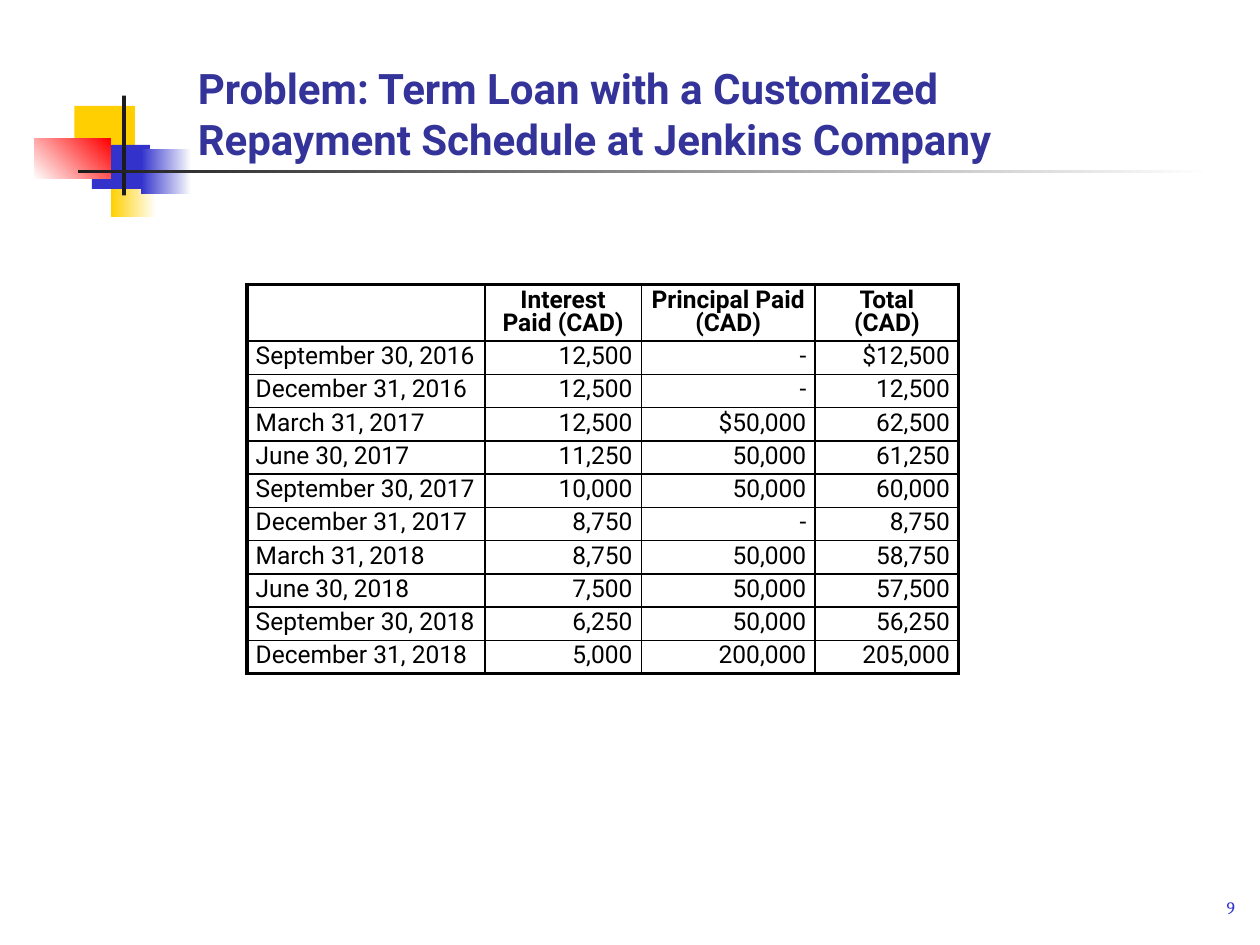
from dataclasses import dataclass
from typing import Any, NamedTuple

from lxml import etree
from pptx import Presentation
from pptx.dml.color import RGBColor
from pptx.enum.shapes import MSO_SHAPE
from pptx.enum.text import MSO_ANCHOR, MSO_AUTO_SIZE, PP_ALIGN
from pptx.oxml.ns import qn
from pptx.util import Inches, Pt

RECTANGLE = MSO_SHAPE.RECTANGLE
TOP, BOTTOM = MSO_ANCHOR.TOP, MSO_ANCHOR.BOTTOM
LEFT, CENTER, RIGHT = PP_ALIGN.LEFT, PP_ALIGN.CENTER, PP_ALIGN.RIGHT
NO_AUTOFIT = MSO_AUTO_SIZE.NONE
TITLE_ONLY_LAYOUT = 5


@dataclass(frozen=True)
class Theme:
    font: str = "Roboto"
    number_font: str = "Cambria"
    title_color: str = "333399"
    text_color: str = "000000"
    yellow: str = "FFCF01"
    blue: str = "3333CC"
    red: str = "FF0000"
    dark: str = "1C1C1C"
    white: str = "FFFFFF"
    title_size: float = 24
    table_size: float = 14
    number_size: float = 10
    outer_border: float = 2.25
    inner_border: float = 1


THEME = Theme()


class Box(NamedTuple):
    left: float
    top: float
    width: float
    height: float


class Block(NamedTuple):
    """A decorative rectangle; a second colour makes it a gradient."""
    box: Box
    color: str
    end_color: str | None = None
    angle: float = 0


class Payment(NamedTuple):
    date: str
    interest: str
    principal: str
    total: str


BLOCKS = [
    Block(Box(0.88, 1.2, 0.36, 0.52), THEME.yellow, THEME.white),
    Block(Box(0.59, 0.84, 0.48, 0.35), THEME.yellow),
    Block(Box(0.73, 1.15, 0.46, 0.35), THEME.blue),
    Block(Box(1.12, 1.18, 0.4, 0.36), THEME.blue, THEME.white),
    Block(Box(0.27, 1.1, 0.61, 0.32), THEME.white, THEME.red, 45),
    Block(Box(0.97, 0.76, 0.03, 0.79), THEME.dark),
    Block(Box(0.62, 1.35, 9, 0.02), THEME.dark, THEME.white),
]

TITLE = "Problem: Term Loan with a Customized Repayment Schedule at Jenkins Company"
HEADER = Payment("", "Interest Paid (CAD)", "Principal Paid (CAD)", "Total\n(CAD)")
PAYMENTS = [
    Payment("September 30, 2016", "12,500", "-", "$12,500"),
    Payment("December 31, 2016", "12,500", "-", "12,500"),
    Payment("March 31, 2017", "12,500", "$50,000", "62,500"),
    Payment("June 30, 2017", "11,250", "50,000", "61,250"),
    Payment("September 30, 2017", "10,000", "50,000", "60,000"),
    Payment("December 31, 2017", "8,750", "-", "8,750"),
    Payment("March 31, 2018", "8,750", "50,000", "58,750"),
    Payment("June 30, 2018", "7,500", "50,000", "57,500"),
    Payment("September 30, 2018", "6,250", "50,000", "56,250"),
    Payment("December 31, 2018", "5,000", "200,000", "205,000"),
]
COLUMN_WIDTHS = [1.89, 1.24, 1.38, 1.14]
HEADER_HEIGHT, ROW_HEIGHT = 0.44, 0.26


def set_values(target: Any, values: dict[str, Any]) -> None:
    for name, value in values.items():
        setattr(target, name, value)


def inches(box: Box) -> list[int]:
    return [Inches(length) for length in box]


def write_text(text_frame: Any, text: str, font: dict[str, Any], color: str,
               paragraph_format: dict[str, Any]) -> None:
    text_frame.text = text
    for paragraph in text_frame.paragraphs:
        set_values(paragraph, paragraph_format)
        set_values(paragraph.font, font)
        for run in paragraph.runs:
            set_values(run.font, font)
            run.font.color.rgb = RGBColor.from_string(color)


def draw_block(slide: Any, block: Block) -> None:
    shape = slide.shapes.add_shape(RECTANGLE, *inches(block.box))
    shape.shadow.inherit = False
    shape.line.fill.background()
    if block.end_color is None:
        shape.fill.solid()
        shape.fill.fore_color.rgb = RGBColor.from_string(block.color)
        return
    shape.fill.gradient()
    shape.fill.gradient_angle = block.angle
    for stop, color in zip(shape.fill.gradient_stops, (block.color, block.end_color)):
        stop.color.rgb = RGBColor.from_string(color)


def draw_title(slide: Any, box: Box) -> None:
    title = slide.shapes.title
    set_values(title, dict(zip(("left", "top", "width", "height"), inches(box))))
    set_values(title.text_frame, {"vertical_anchor": BOTTOM, "word_wrap": True,
                                  "auto_size": NO_AUTOFIT})
    font = {"name": THEME.font, "size": Pt(THEME.title_size), "bold": True}
    write_text(title.text_frame, TITLE, font, THEME.title_color, {"alignment": LEFT})


def draw_slide_number(slide: Any, box: Box) -> None:
    text_frame = slide.shapes.add_textbox(*inches(box)).text_frame
    set_values(text_frame, {"word_wrap": True, "vertical_anchor": TOP, "margin_top": 0})
    font = {"name": THEME.number_font, "size": Pt(THEME.number_size)}
    write_text(text_frame, "9", font, THEME.blue, {"alignment": RIGHT})


def set_borders(cell: Any, outer_sides: dict[str, bool]) -> None:
    properties = cell._tc.get_or_add_tcPr()
    for position, (side, is_outer) in enumerate(outer_sides.items()):
        width = THEME.outer_border if is_outer else THEME.inner_border
        line = etree.Element(qn(f"a:ln{side}"), w=str(Pt(width)))
        fill = etree.SubElement(line, qn("a:solidFill"))
        etree.SubElement(fill, qn("a:srgbClr"), val=THEME.text_color)
        properties.insert(position, line)


def draw_schedule(slide: Any, left: float, top: float) -> None:
    rows = [HEADER, *PAYMENTS]
    heights = [HEADER_HEIGHT] + [ROW_HEIGHT] * len(PAYMENTS)
    box = Box(left, top, sum(COLUMN_WIDTHS), sum(heights))
    table = slide.shapes.add_table(len(rows), len(COLUMN_WIDTHS), *inches(box)).table
    set_values(table, {"first_row": False, "horz_banding": False})
    for column, width in zip(table.columns, COLUMN_WIDTHS):
        column.width = Inches(width)

    margins = {"margin_left": Inches(0.07), "margin_right": Inches(0.07),
               "margin_top": Inches(0.04), "margin_bottom": Inches(0.04)}
    last_row, last_column = len(rows) - 1, len(COLUMN_WIDTHS) - 1
    for row_index, (row, height) in enumerate(zip(rows, heights)):
        table.rows[row_index].height = Inches(height)
        is_header = row_index == 0
        font = {"name": THEME.font, "size": Pt(THEME.table_size), "bold": is_header}
        for column_index, text in enumerate(row):
            cell = table.cell(row_index, column_index)
            set_values(cell, margins)
            cell.fill.background()
            alignment = CENTER if is_header else RIGHT if column_index else LEFT
            write_text(cell.text_frame, text, font, THEME.text_color,
                       {"alignment": alignment, "line_spacing": 0.8})
            set_borders(cell, {"L": column_index == 0, "R": column_index == last_column,
                               "T": is_header, "B": row_index == last_row})


def main() -> None:
    presentation = Presentation()
    presentation.slide_width, presentation.slide_height = Inches(10), Inches(7.5)
    slide = presentation.slides.add_slide(presentation.slide_layouts[TITLE_ONLY_LAYOUT])

    # Corner decoration and rule under the title
    for block in BLOCKS:
        draw_block(slide, block)

    # Title, repayment table and slide number
    draw_title(slide, Box(1.47, 0.49, 7.13, 0.86))
    draw_schedule(slide, 1.96, 2.26)
    draw_slide_number(slide, Box(8.34, 7.12, 1.56, 0.38))

    presentation.save("out.pptx")


if __name__ == "__main__":
    main()
